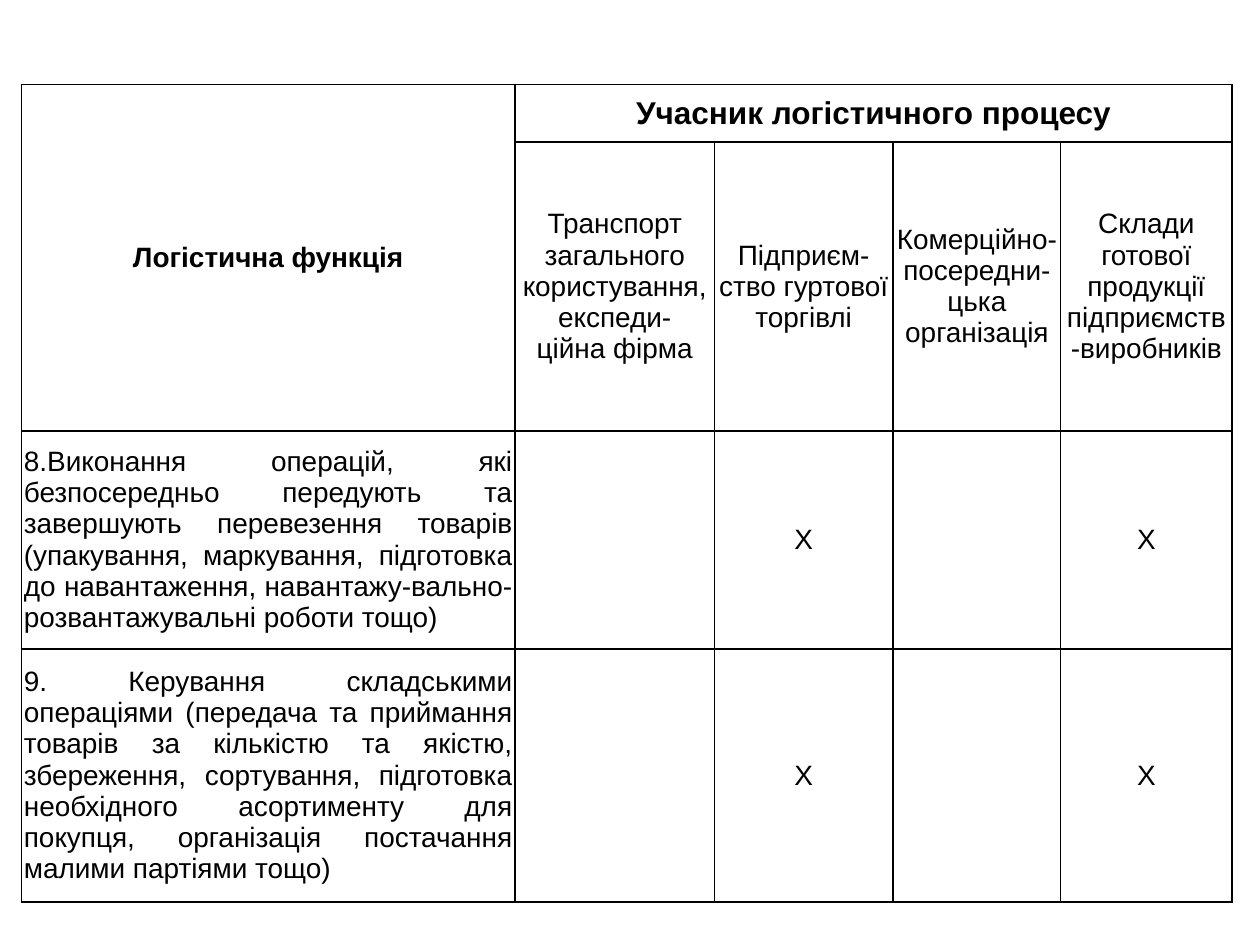
from lxml.etree import SubElement
from pptx import Presentation
from pptx.dml.color import RGBColor
from pptx.enum.text import MSO_ANCHOR, PP_ALIGN
from pptx.oxml.ns import qn
from pptx.util import Pt

BLACK = RGBColor(0, 0, 0)
WHITE = RGBColor(255, 255, 255)
FONT = "Arial"
COL_WIDTHS = [282.2, 113.8, 102.2, 95.8, 97.9]
ROW_HEIGHTS = [33.1, 164.9, 124.6, 144.7]

FUNCTION_HEADER = "Логістична функція"
GROUP_HEADER = "Учасник логістичного процесу"
PARTICIPANTS = [
    "Транспорт загального\nкористування, експеди-\nційна фірма",
    "Підприєм-ство гуртової торгівлі",
    "Комерційно-посередни-\nцька організація",
    "Склади готової продукції підприємств-виробників",
]
FUNCTIONS = [
    ("8.Виконання операцій, які безпосередньо передують та завершують "
     "перевезення товарів (упакування, маркування, підготовка до навантаження, "
     "навантажу-вально-розвантажувальні роботи тощо)", ["", "Х", "", "Х"]),
    ("9. Керування складськими операціями (передача та приймання товарів за "
     "кількістю та якістю, збереження, сортування, підготовка необхідного "
     "асортименту для покупця, організація постачання малими партіями тощо)",
     ["", "Х", "", "Х"]),
]


def style_cell(cell):
    """Give a cell a white fill, thin margins and a black border all round."""
    cell.vertical_anchor = MSO_ANCHOR.MIDDLE
    cell.margin_left = cell.margin_right = Pt(1.5)
    cell.margin_top = cell.margin_bottom = Pt(1.5)
    tcPr = cell._tc.get_or_add_tcPr()
    for side in ("a:lnL", "a:lnR", "a:lnT", "a:lnB"):
        ln = SubElement(tcPr, qn(side), w=str(Pt(1)))
        fill = SubElement(ln, qn("a:solidFill"))
        SubElement(fill, qn("a:srgbClr"), val=str(BLACK))
    cell.fill.solid()
    cell.fill.fore_color.rgb = WHITE


def write_cell(cell, text, size=16, bold=False, align=PP_ALIGN.CENTER):
    cell.text_frame.text = text
    for p in cell.text_frame.paragraphs:
        p.alignment = align
        for r in p.runs:
            r.font.name = FONT
            r.font.size = Pt(size)
            r.font.bold = bold
            r.font.color.rgb = BLACK


def add_grid(slide):
    frame = slide.shapes.add_table(
        len(ROW_HEIGHTS), len(COL_WIDTHS), Pt(12.2), Pt(48.2),
        Pt(sum(COL_WIDTHS)), Pt(sum(ROW_HEIGHTS)))
    table = frame.table
    table.first_row = table.horz_banding = False
    for column, width in zip(table.columns, COL_WIDTHS):
        column.width = Pt(width)
    for row, height in zip(table.rows, ROW_HEIGHTS):
        row.height = Pt(height)
    for cell in table.iter_cells():
        style_cell(cell)
    return table


def fill_headers(table):
    table.cell(0, 0).merge(table.cell(1, 0))
    table.cell(0, 1).merge(table.cell(0, len(PARTICIPANTS)))
    write_cell(table.cell(0, 0), FUNCTION_HEADER, bold=True)
    write_cell(table.cell(0, 1), GROUP_HEADER, size=18, bold=True)
    for col, name in enumerate(PARTICIPANTS, 1):
        write_cell(table.cell(1, col), name)


def fill_functions(table):
    for row, (name, marks) in enumerate(FUNCTIONS, 2):
        write_cell(table.cell(row, 0), name, align=PP_ALIGN.JUSTIFY)
        for col, mark in enumerate(marks, 1):
            write_cell(table.cell(row, col), mark)


def main():
    prs = Presentation()
    prs.slide_width, prs.slide_height = Pt(720), Pt(540)
    slide = prs.slides.add_slide(prs.slide_layouts[6])
    table = add_grid(slide)
    fill_headers(table)
    fill_functions(table)
    prs.save("out.pptx")


if __name__ == "__main__":
    main()
